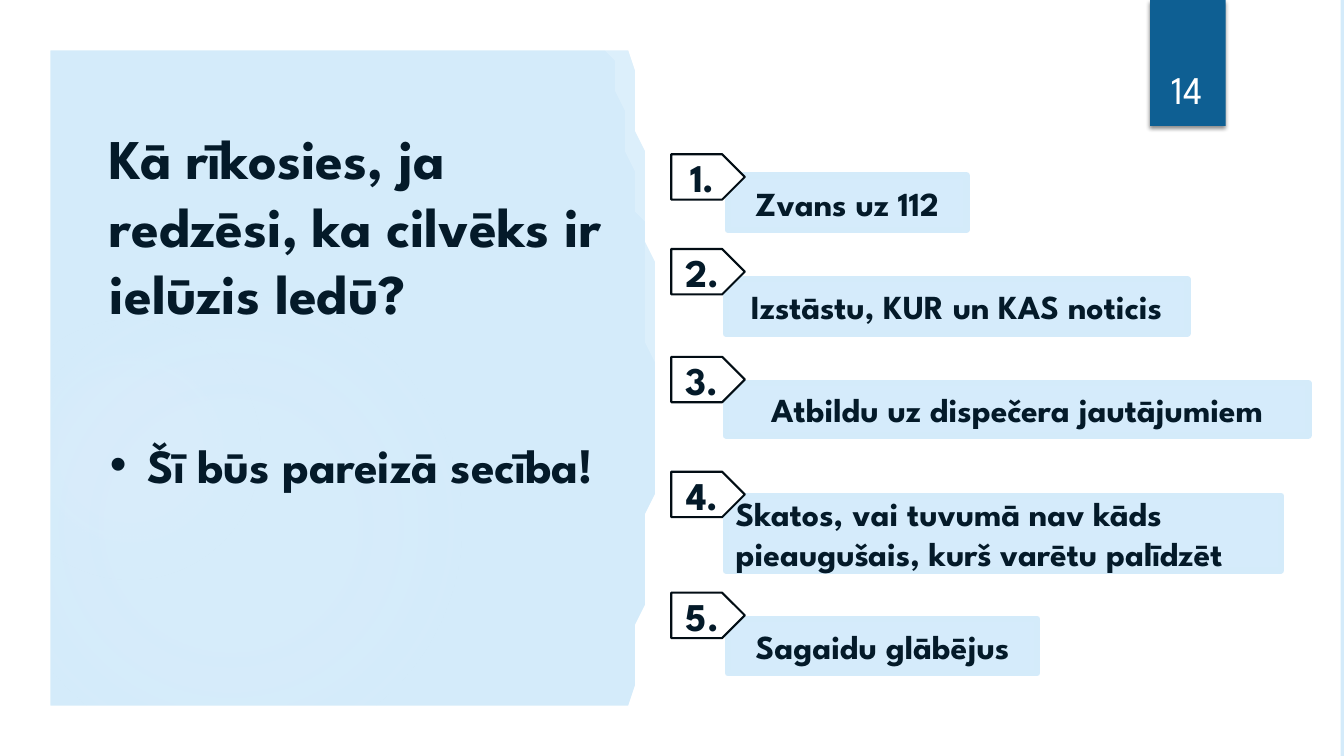
from lxml import etree
from pptx import Presentation
from pptx.dml.color import RGBColor
from pptx.enum.shapes import MSO_SHAPE
from pptx.enum.text import MSO_ANCHOR, MSO_AUTO_SIZE, PP_ALIGN
from pptx.oxml import parse_xml
from pptx.oxml.ns import qn
from pptx.util import Inches, Pt

RECTANGLE, OVAL, PENTAGON = MSO_SHAPE.RECTANGLE, MSO_SHAPE.OVAL, MSO_SHAPE.PENTAGON
TOP, MIDDLE, BOTTOM = MSO_ANCHOR.TOP, MSO_ANCHOR.MIDDLE, MSO_ANCHOR.BOTTOM
LEFT, CENTER = PP_ALIGN.LEFT, PP_ALIGN.CENTER
DRAWING = 'xmlns:a="http://schemas.openxmlformats.org/drawingml/2006/main"'
FONT = "League Spartan"
WHITE, INK, OUTLINE = "FFFFFF", "041A29", "020D14"
SKY, PALE, GLOW, BLUE = "D4EBFA", "D5EBFB", "EEF7FD", "0E5F93"
CELL = Inches(0.1)
COLUMNS, ROWS = 133.33, 75
MARGIN = 5.2
CURVE_STEPS = 24
STEPS = [
    (15.3, "Zvans uz 112", (72.2, 17.4, 23.7, 5.4), CENTER),
    (24.7, "Izstāstu, KUR un KAS noticis", (72, 27.7, 45.8, 5.4), CENTER),
    (35.4, "Atbildu uz dispečera jautājumiem", (72, 38, 57.8, 5.2), CENTER),
    (46.8, "Skatos, vai tuvumā nav kāds pieaugušais, kurš varētu palīdzēt",
     (72, 49.2, 55.1, 7.4), LEFT),
    (58.8, "Sagaidu glābējus", (72.2, 61.4, 30.7, 5.4), CENTER),
]


def color(code):
    """Turn a hex string into a colour."""
    return RGBColor.from_string(code)


def cells(*counts):
    """Turn grid counts into lengths."""
    return [round(count * CELL) for count in counts]


def paint(shape, fill, line=None, width=0):
    """Give a shape a flat fill and an optional outline."""
    shape.shadow.inherit = False
    shape.fill.solid()
    shape.fill.fore_color.rgb = color(fill)
    if line:
        shape.line.color.rgb = color(line)
        shape.line.width = Pt(width)
    else:
        shape.line.fill.background()


def write(shape, text, size, align=LEFT, anchor=MIDDLE, ink=INK, bold=True):
    """Write one formatted paragraph into a shape."""
    frame = shape.text_frame
    frame.text = text
    frame.word_wrap = True
    frame.auto_size = MSO_AUTO_SIZE.NONE
    frame.vertical_anchor = anchor
    paragraph = frame.paragraphs[0]
    paragraph.alignment = align
    paragraph.space_before = Pt(0)
    paragraph.font.name = FONT
    paragraph.font.size = Pt(size)
    paragraph.font.bold = bold
    paragraph.font.color.rgb = color(ink)


def add_block(page, kind, area, fill, line=None, width=0):
    """Add a painted preset shape on the grid."""
    block = page.shapes.add_shape(kind, *cells(*area))
    paint(block, fill, line, width)
    return block


def add_outline(page, contours, fill):
    """Add a filled outline made of closed contours in grid units."""
    start, *rest = contours[0]
    builder = page.shapes.build_freeform(*start, scale=CELL)
    builder.add_line_segments(rest, close=True)
    for start, *rest in contours[1:]:
        builder.move_to(*start)
        builder.add_line_segments(rest, close=True)
    outline = builder.convert_to_shape()
    paint(outline, fill)
    return outline


def corners(left, top, right, bottom):
    """List the corners of a rectangle."""
    return [(left, top), (left, bottom), (right, bottom), (right, top)]


def bulge(edge, depth, middle, reach, top, bottom):
    """List points down a shallow curve that bulges to the right."""
    heights = [top + (bottom - top) * step / CURVE_STEPS for step in range(CURVE_STEPS + 1)]
    return [(edge + depth * (1 - ((y - middle) / reach) ** 2), y) for y in heights]


def add_glow(page, top, size, strength, fade):
    """Add a round glow that fades outwards from the left edge."""
    glow = add_block(page, OVAL, (0, top, size, size), GLOW)
    properties = glow._element.spPr
    stops = "".join(
        f'<a:gs pos="{place * 1000}"><a:srgbClr val="{GLOW}">'
        f'<a:alpha val="{alpha * 1000}"/></a:srgbClr></a:gs>'
        for place, alpha in ((0, strength), (36, strength), (fade, 0)))
    gradient = parse_xml(
        f'<a:gradFill {DRAWING}><a:gsLst>{stops}</a:gsLst><a:path path="circle">'
        '<a:fillToRect l="50000" t="50000" r="50000" b="50000"/></a:path></a:gradFill>')
    properties.replace(properties.find(qn("a:solidFill")), gradient)


def add_backdrop(page):
    """Build the blue panel with its curved edge and white frame."""
    page.background.fill.solid()
    page.background.fill.fore_color.rgb = color(SKY)
    add_glow(page, 29.2, 45.8, 10, 75)
    add_glow(page, 31.7, 25.8, 8, 72)
    add_block(page, RECTANGLE, (67.5, 4.4, 61.2, 66.2), WHITE)
    panel_edge = bulge(62.3, 2.6, 37.5, 33.1, 4.4, 70.6)
    add_outline(page, [panel_edge + [(76, 70.6), (76, 4.4)]], WHITE)
    sliver_edge = bulge(60.2, 4.4, 40.4, 35.8, 4.6, 40.4)
    sliver = add_outline(page, [sliver_edge + [(65.3, 40.1), (65.7, 25), (65, 4.4)]], WHITE)
    tint = sliver._element.spPr.find(qn("a:solidFill"))[0]
    etree.SubElement(tint, qn("a:alpha"), val="20000")
    hole = corners(MARGIN, MARGIN, 128.1, ROWS - MARGIN)
    add_outline(page, [corners(0, 0, COLUMNS, ROWS), hole[::-1]], WHITE)


def add_page_number(page, number):
    """Add the blue tab and the page number on it."""
    tab = add_block(page, RECTANGLE, (114.1, 0, 7.5, 12.5), BLUE)
    effects = tab._element.spPr.find(qn("a:effectLst"))
    effects.append(parse_xml(
        f'<a:outerShdw {DRAWING} blurRad="38100" dist="25400" dir="5400000" rotWithShape="0">'
        '<a:srgbClr val="000000"><a:alpha val="45000"/></a:srgbClr></a:outerShdw>'))
    box = page.shapes.add_textbox(*cells(113.2, 3.2, 9.2, 8.4))
    write(box, number, 28, CENTER, BOTTOM, WHITE, False)


def fill_placeholder(page, box, area, text, size, anchor):
    """Move a placeholder to the front, place it and write its text."""
    page.shapes._spTree.append(box._element)
    box.left, box.top, box.width, box.height = cells(*area)
    box.text_frame.text = text
    properties = box.text_frame.paragraphs[0]._p.get_or_add_pPr()
    properties.set("marL", "0")
    properties.set("indent", "0")
    etree.SubElement(properties, qn("a:buNone"))
    write(box, text, size, LEFT, anchor)


def add_steps(page):
    """Add the answer bars and then their numbered tags."""
    for _, text, area, align in STEPS:
        bar = add_block(page, RECTANGLE, area, PALE, SKY, 4.5)
        write(bar, text, 24, align)
    for number, (top, *_) in enumerate(STEPS, 1):
        tag = add_block(page, PENTAGON, (66.6, top, 7.3, 4.5), WHITE, OUTLINE, 1.5)
        write(tag, f"{number}.", 28, CENTER)


def main():
    """Build the slide and save it."""
    deck = Presentation()
    deck.slide_width, deck.slide_height = cells(COLUMNS, ROWS)
    page = deck.slides.add_slide(deck.slide_layouts[1])
    title, body = page.placeholders
    add_backdrop(page)
    add_page_number(page, "14")
    fill_placeholder(page, title, (9.9, 15.3, 52.5, 17.5),
                     "Kā rīkosies, ja redzēsi, ka cilvēks ir ielūzis ledū?", 40, BOTTOM)
    fill_placeholder(page, body, (9.9, 42.7, 51.8, 26.3), "Šī būs pareizā secība!", 34, TOP)
    add_steps(page)
    deck.save("out.pptx")


if __name__ == "__main__":
    main()
